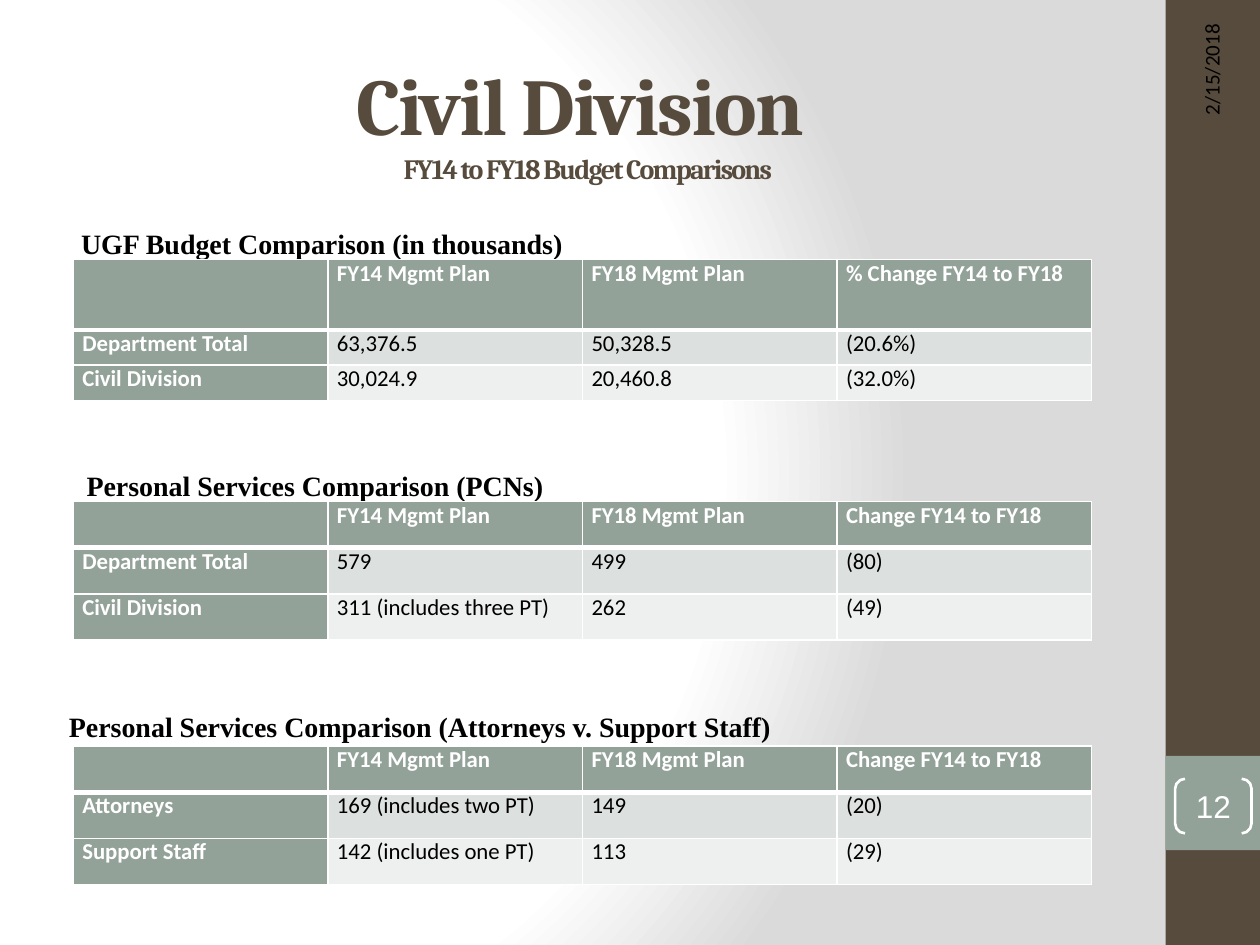
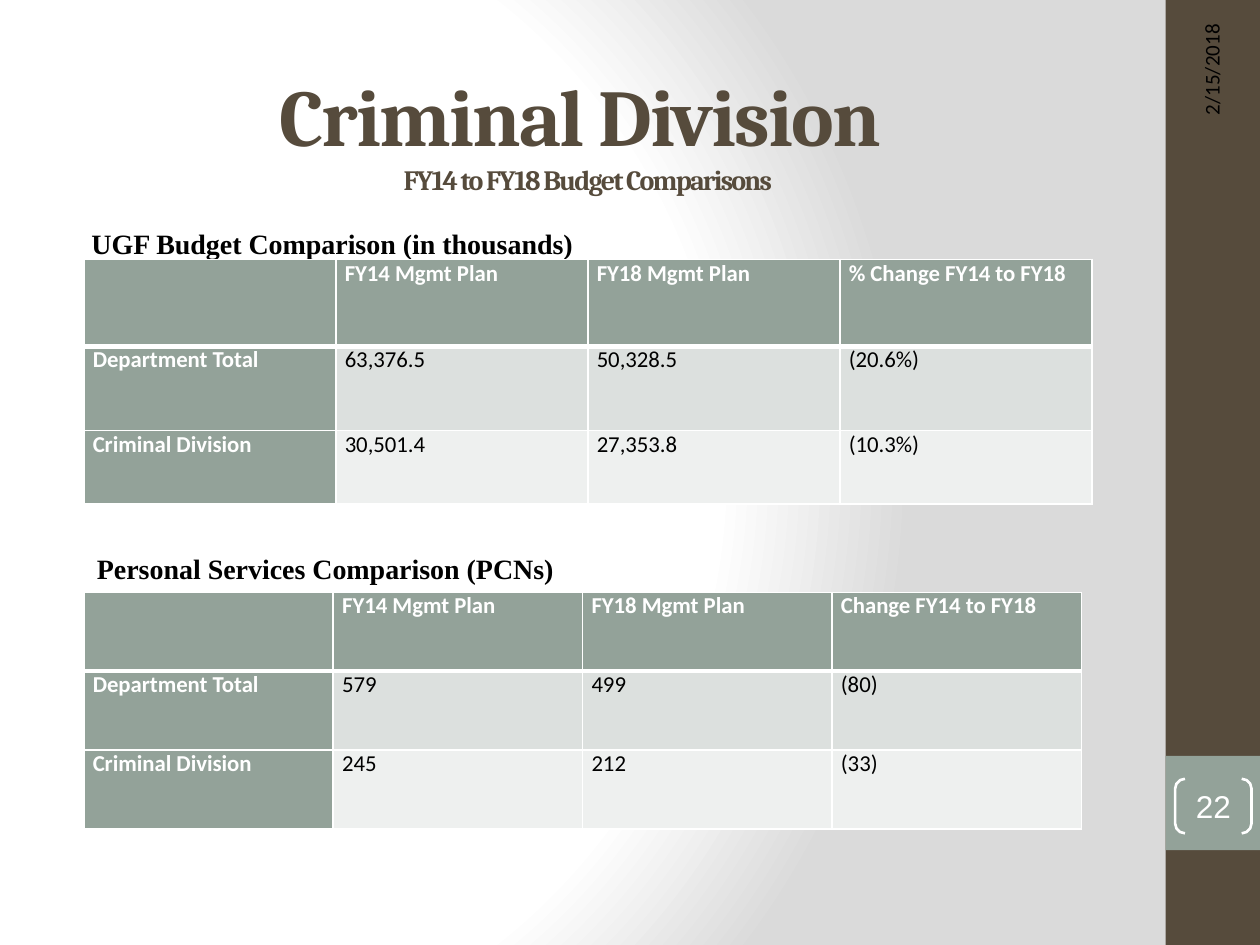
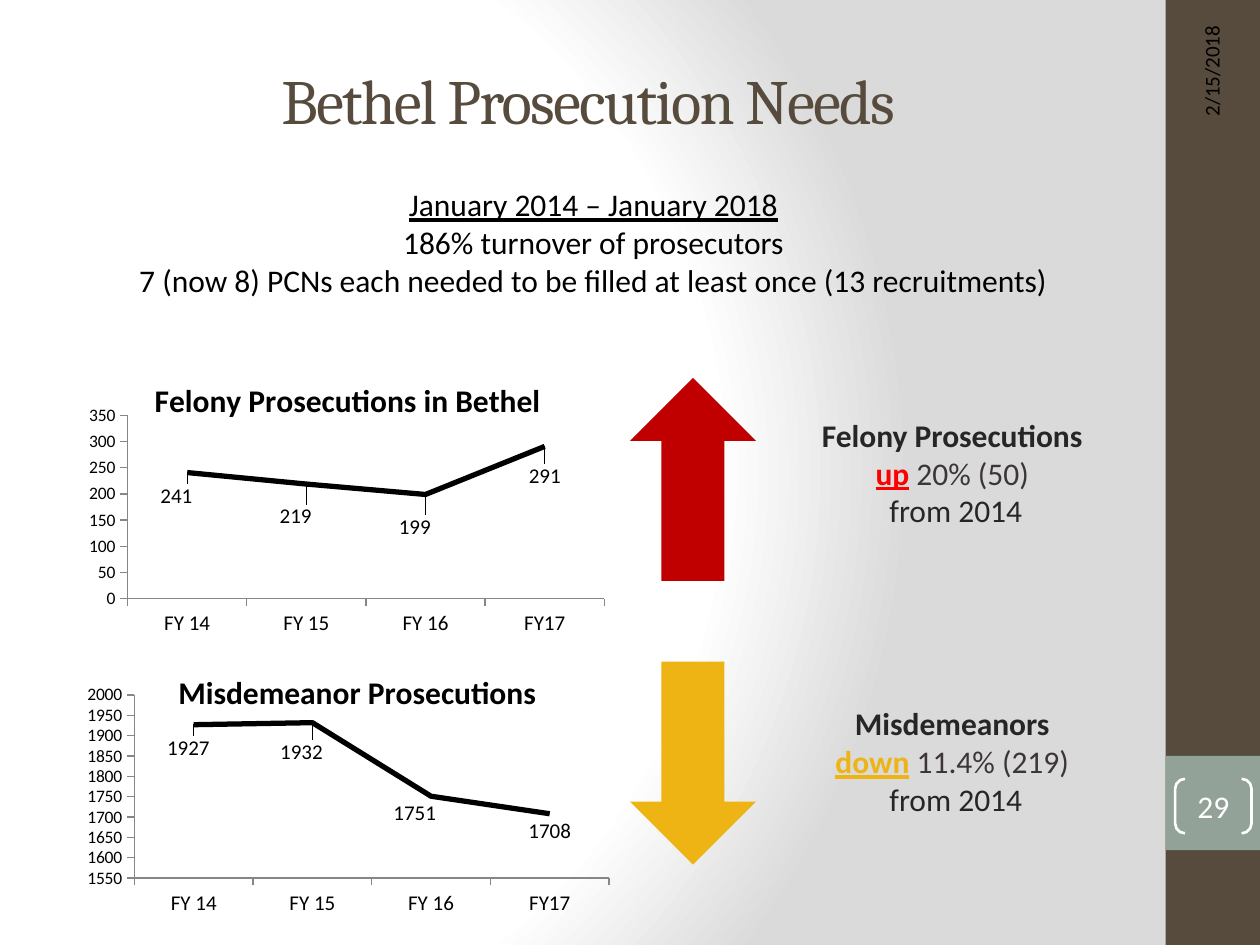
import lxml.etree
import pptx
import pptx.chart.data
import pptx.dml.color
import pptx.enum.chart
import pptx.enum.shapes
import pptx.enum.text
import pptx.oxml
import pptx.oxml.ns
import pptx.util

Cm = pptx.util.Cm
Pt = pptx.util.Pt
ALIGN = pptx.enum.text.PP_ALIGN
ANCHOR = pptx.enum.text.MSO_ANCHOR
SHAPE = pptx.enum.shapes.MSO_SHAPE
COLORS = {
    "brown": "564B3C", "sage": "93A299", "white": "FFFFFF", "black": "000000",
    "gray": "DADADA", "band_dark": "DCE0DE", "band_light": "EEF0EF",
    "axis": "868686", "red": "C00000", "bright_red": "FF0000",
    "gold": "EDB413", "ink": "262626", "soft_ink": "3C3638",
}
RGB = {name: pptx.dml.color.RGBColor.from_string(value) for name, value in COLORS.items()}
DRAWING = pptx.oxml.ns.nsdecls("a")


def write(paragraph, text, size=18, font="Calibri", color="black", bold=False,
          underline=False, spacing=None, align=None):
    run = paragraph.add_run()
    run.text = text
    run.font.size = Pt(size)
    run.font.name = font
    run.font.bold = bold
    run.font.underline = underline
    run.font.color.rgb = RGB[color]
    if spacing is not None:
        run.font._element.set("spc", str(spacing))
    if align is not None:
        paragraph.alignment = align


def add_box(slide, left, top, width, height, shape_type=None, fill=None, anchor=ANCHOR.TOP):
    place = Cm(left), Cm(top), Cm(width), Cm(height)
    if shape_type is None:
        box = slide.shapes.add_textbox(*place)
    else:
        box = slide.shapes.add_shape(shape_type, *place)
        box.shadow.inherit = False
        box.line.fill.background()
        if fill:
            box.fill.solid()
            box.fill.fore_color.rgb = RGB[fill]
        else:
            box.fill.background()
    box.text_frame.word_wrap = True
    box.text_frame.vertical_anchor = anchor
    return box


presentation = pptx.Presentation()
presentation.slide_width = Cm(25.4)
presentation.slide_height = Cm(19.05)

# Shared background
master = presentation.slide_master
master.background.fill.solid()
background = master.element.xpath(".//p:bgPr")[0]
stops = "".join(
    f'<a:gs pos="{position}"><a:srgbClr val="{COLORS[color]}"/></a:gs>'
    for position, color in [(0, "white"), (75000, "white"), (100000, "gray")])
background.replace(background[0], pptx.oxml.parse_xml(
    f'<a:gradFill {DRAWING} rotWithShape="1"><a:gsLst>{stops}</a:gsLst><a:path path="circle">'
    '<a:fillToRect l="20000" t="50000" r="100000" b="50000"/></a:path></a:gradFill>'))

# Side band, title, page number and date on every slide
SUBTITLE = "FY14 to FY18 Budget Comparisons"
pages = [
    ("Civil Division ", SUBTITLE, (0.85, 0.41, 22.01, 4.02), "12", "Arial", 3.12),
    ("Criminal Division ", SUBTITLE, (0.85, 0.64, 22.01, 4.02), "22", "Arial", 3.12),
    ("Bethel Prosecution Needs", None, (1.27, 0.42, 21.17, 3.18), "29", "Calibri", 3.15),
]
slides = []
for title, subtitle, title_place, number, number_font, date_top in pages:
    slide = presentation.slides.add_slide(presentation.slide_layouts[6])
    slides.append(slide)
    add_box(slide, 23.5, 0, 1.9, 19.05, SHAPE.RECTANGLE, "brown")
    add_box(slide, 23.5, 15.24, 1.9, 1.9, SHAPE.RECTANGLE, "sage")

    paragraph = add_box(slide, *title_place, anchor=ANCHOR.MIDDLE).text_frame.paragraphs[0]
    write(paragraph, title, size=46 if subtitle else 36, font="Cambria", color="brown",
          bold=bool(subtitle), spacing=-100, align=ALIGN.CENTER)
    if subtitle:
        paragraph.add_line_break()
        write(paragraph, subtitle, size=16, font="Cambria", color="brown", bold=True, spacing=-100)

    bracket = add_box(slide, 23.69, 15.7, 1.54, 1.1, SHAPE.DOUBLE_BRACKET, anchor=ANCHOR.MIDDLE)
    bracket.adjustments[0] = 0.18
    bracket.line.color.rgb = RGB["white"]
    bracket.line.width = Pt(1.5)
    frame = bracket.text_frame
    frame.margin_left = frame.margin_right = frame.margin_top = frame.margin_bottom = 0
    write(frame.paragraphs[0], number, font=number_font, color="white", align=ALIGN.CENTER)

    date = add_box(slide, 21.03, date_top, 6.78, 1.02, anchor=ANCHOR.MIDDLE)
    date.rotation = 270
    write(date.text_frame.paragraphs[0], "2/15/2018", size=12, align=ALIGN.RIGHT)

# Budget tables: slide, heading, heading place, table left, top, width, row heights, rows
UGF = "UGF Budget Comparison (in thousands) "
PCNS = "Personal Services Comparison (PCNs)"
STAFF = "Personal Services Comparison (Attorneys v. Support Staff)"
PLANS = ["", "FY14 Mgmt Plan", "FY18 Mgmt Plan"]
PERCENT_HEADER = PLANS + ["% Change FY14 to FY18"]
COUNT_HEADER = PLANS + ["Change FY14 to FY18"]
UGF_TOTAL = ["Department Total", "63,376.5", "50,328.5", "(20.6%)"]
PCN_TOTAL = ["Department Total", "579 ", "499", "(80)"]
tables = [
    (slides[0], UGF, (0.21, 4.45, 12.7), 1.48, 5.23, 20.53, [1.42, 0.71, 0.71],
     [PERCENT_HEADER, UGF_TOTAL, ["Civil Division", "30,024.9", "20,460.8", "(32.0%)"]]),
    (slides[0], PCNS, (0, 9.32, 12.7), 1.48, 10.11, 20.53, [0.93] * 3,
     [COUNT_HEADER, PCN_TOTAL, ["Civil Division", "311 (includes three PT)", "262", "(49)"]]),
    (slides[0], STAFF, (0, 14.17, 16.93), 1.48, 15.04, 20.53, [0.93] * 3,
     [COUNT_HEADER, ["Attorneys", "169 (includes two PT)", "149", "(20)"],
      ["Support Staff", "142 (includes one PT)", "113", "(29)"]]),
    (slides[1], UGF, (0.42, 4.45, 12.7), 1.69, 5.23, 20.32, [1.75, 1.7, 1.48],
     [PERCENT_HEADER, UGF_TOTAL, ["Criminal Division", "30,501.4", "27,353.8", "(10.3%)"]]),
    (slides[1], PCNS, (0.21, 11, 12.7), 1.69, 11.94, 20.11, [1.59] * 3,
     [COUNT_HEADER, PCN_TOTAL, ["Criminal Division ", "245", "212", "(33)"]]),
]
for slide, heading, heading_place, left, top, width, heights, rows in tables:
    heading_box = add_box(slide, *heading_place, 0.94)
    write(heading_box.text_frame.paragraphs[0], heading, size=16, font="Times New Roman",
          bold=True, align=ALIGN.CENTER)
    table = slide.shapes.add_table(
        len(rows), 4, Cm(left), Cm(top), Cm(width), Cm(sum(heights))).table
    for column in table.columns:
        column.width = Cm(width / 4)
    for row_index, (height, values) in enumerate(zip(heights, rows)):
        table.rows[row_index].height = Cm(height)
        for column_index, value in enumerate(values):
            cell = table.cell(row_index, column_index)
            is_header = row_index == 0 or column_index == 0
            cell.margin_left = cell.margin_right = Cm(0.18)
            cell.margin_top = cell.margin_bottom = 0
            properties = cell._tc.get_or_add_tcPr()
            for side in "LRTB":
                thick = (row_index, side) in [(0, "B"), (1, "T")]
                properties.append(pptx.oxml.parse_xml(
                    f'<a:ln{side} {DRAWING} w="{Pt(3 if thick else 1)}"><a:solidFill>'
                    f'<a:srgbClr val="{COLORS["white"]}"/></a:solidFill></a:ln{side}>'))
            cell.fill.solid()
            band = "band_dark" if row_index == 1 else "band_light"
            cell.fill.fore_color.rgb = RGB["sage" if is_header else band]
            if value:
                write(cell.text_frame.paragraphs[0], value, size=13, bold=is_header,
                      color="white" if is_header else "black", align=ALIGN.JUSTIFY)

# Prosecution charts: title, place, values, axis range, title and plot layout, label shifts
charts = [
    ("Felony Prosecutions in Bethel", (1.6, 6.78, 10.8, 6.15), [241, 219, 199, 291], (0, 350),
     (0.13, 0.12), (0.09, 0.26, 0.89, 0.6),
     [(-0.02, 0.02), (-0.02, 0.05), (-0.02, 0.05), (0, 0.04)]),
    ("Misdemeanor Prosecutions", (1.5, 12.5, 11, 6.05), [1927, 1932, 1751, 1708], (1550, 2000),
     (0.18, 0.15), (0.11, 0.25, 0.87, 0.61),
     [(-0.01, 0.02), (-0.02, 0.04), (-0.03, 0), (0, 0)]),
]
slide = slides[2]
for title, place, values, limits, title_spot, plot_spot, label_shifts in charts:
    data = pptx.chart.data.CategoryChartData()
    data.categories = ["FY 14", "FY 15", "FY 16", "FY17"]
    data.add_series("Series 1", values)
    chart = slide.shapes.add_chart(
        pptx.enum.chart.XL_CHART_TYPE.LINE, *[Cm(length) for length in place], data).chart
    chart.has_legend = False
    chart.font.name = "Calibri"
    chart.font.size = Pt(10)
    chart.font.color.rgb = RGB["black"]
    chart.has_title = True
    write(chart.chart_title.text_frame.paragraphs[0], title, bold=True)
    chart.plots[0].vary_by_categories = False

    value_axis, category_axis = chart.value_axis, chart.category_axis
    value_axis.minimum_scale, value_axis.maximum_scale = limits
    value_axis.major_unit = 50
    value_axis.has_major_gridlines = False
    category_axis.tick_labels.font.size = Pt(12)
    for axis in (value_axis, category_axis):
        axis.major_tick_mark = pptx.enum.chart.XL_TICK_MARK.OUTSIDE
        axis.format.line.color.rgb = RGB["axis"]

    series = chart.plots[0].series[0]
    series.smooth = False
    series.marker.style = pptx.enum.chart.XL_MARKER_STYLE.NONE
    series.format.line.color.rgb = RGB["black"]
    series.format.line.width = Pt(3)
    for index in range(len(values)):
        label = series.points[index].data_label
        label.font.size = Pt(12)
        label.font.color.rgb = RGB["black"]
        label.position = pptx.enum.chart.XL_LABEL_POSITION.BELOW

    layouts = [(chart.element.xpath(".//c:chart/c:title")[0], 1, title_spot),
               (chart.element.xpath(".//c:plotArea")[0], 0, plot_spot)]
    layouts += [(label, 1, shift)
                for label, shift in zip(chart.element.xpath(".//c:dLbl"), label_shifts)]
    for parent, position, spot in layouts:
        for old_layout in parent.xpath("./c:layout"):
            parent.remove(old_layout)
        is_label = parent.tag.endswith("dLbl")
        modes = "" if is_label else '<c:xMode val="edge"/><c:yMode val="edge"/>'
        target = '<c:layoutTarget val="inner"/>' if len(spot) == 4 else ""
        numbers = "".join(f'<c:{key} val="{number}"/>' for key, number in zip("xywh", spot))
        parent.insert(position, pptx.oxml.parse_xml(
            f'<c:layout {pptx.oxml.ns.nsdecls("c")}><c:manualLayout>{target}{modes}{numbers}'
            '</c:manualLayout></c:layout>'))

# Turnover summary
frame = add_box(slide, 2.44, 3.61, 19.05, 3.33).text_frame
summary = ["January 2014 – January 2018", "186% turnover of prosecutors",
           "7 (now 8) PCNs each needed to be filled at least once (13 recruitments)"]
for index, line in enumerate(summary):
    paragraph = frame.add_paragraph() if index else frame.paragraphs[0]
    write(paragraph, line, underline=index == 0, align=ALIGN.CENTER)

# Trend arrows
add_box(slide, 12.7, 7.62, 2.54, 4.09, SHAPE.UP_ARROW, "red")
add_box(slide, 12.7, 13.34, 2.54, 4.09, SHAPE.DOWN_ARROW, "gold")

# Trend remarks
frame = add_box(slide, 15.04, 8.26, 8.46, 9.65).text_frame
trends = [("Felony Prosecutions ", "up", "bright_red", "20% (50) "),
          ("Misdemeanors ", "down", "gold", "11.4% (219) ")]
for index, (subject, direction, color, amount) in enumerate(trends):
    paragraph = frame.add_paragraph() if index else frame.paragraphs[0]
    if index:
        paragraph.space_before = Pt(100)
    write(paragraph, subject, color="ink", bold=True, align=ALIGN.CENTER)
    paragraph = frame.add_paragraph()
    write(paragraph, direction, color=color, bold=True, underline=True, align=ALIGN.CENTER)
    write(paragraph, " " + amount, color="soft_ink")
    write(frame.add_paragraph(), "from 2014", color="ink", align=ALIGN.CENTER)

presentation.save("out.pptx")
